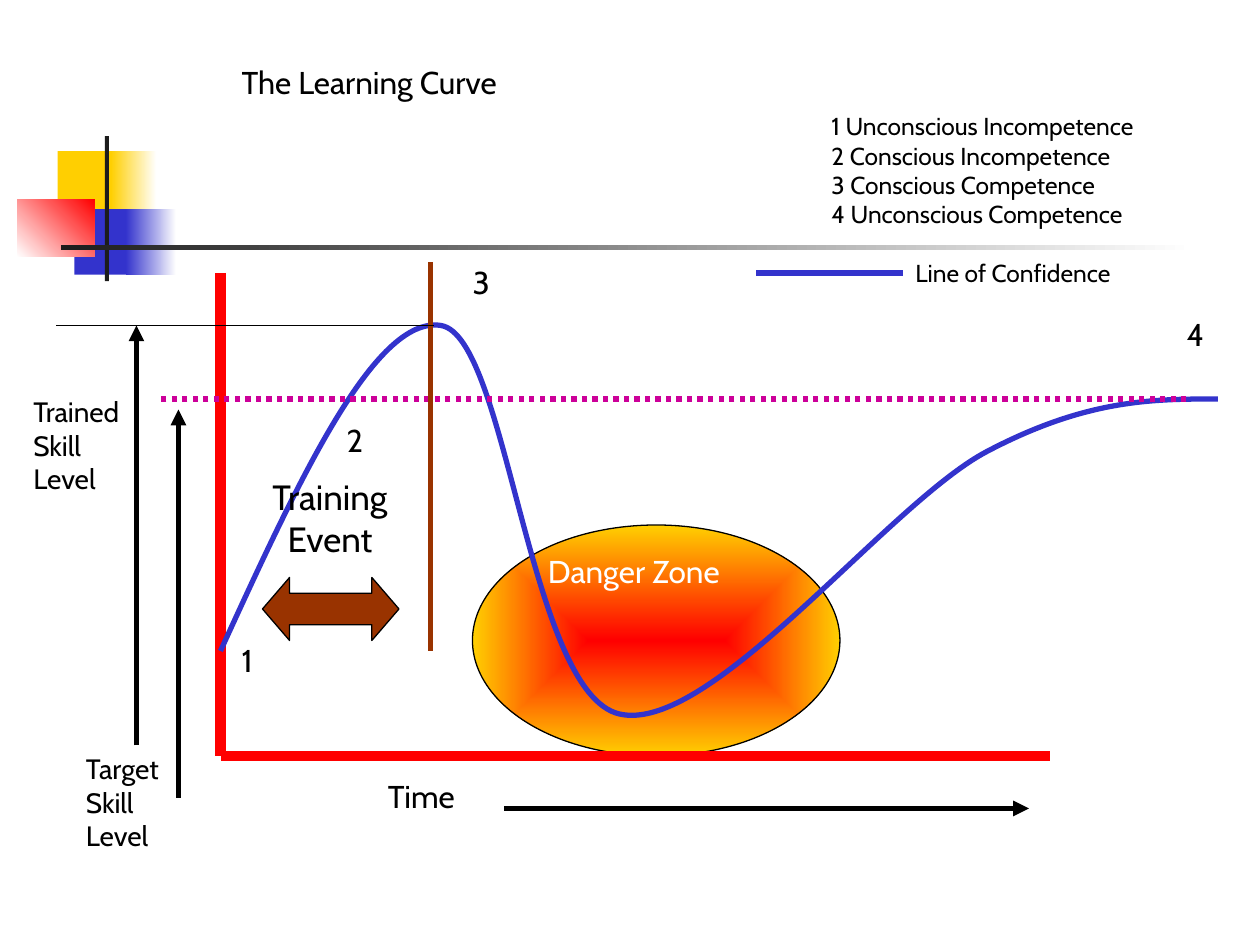
"""Build the learning curve slide with its confidence line and danger zone."""
import pptx
import pptx.dml.color
import pptx.enum.dml
import pptx.enum.shapes
import pptx.enum.text
import pptx.oxml
import pptx.oxml.ns
import pptx.util

Pt = pptx.util.Pt
SHAPES = pptx.enum.shapes.MSO_SHAPE
ALIGN = pptx.enum.text.PP_ALIGN
COLORS = {
    "black": "000000", "white": "FFFFFF", "dark": "1C1C1C", "yellow": "FFCF01",
    "blue": "3333CC", "red": "FF0000", "magenta": "CC0099", "brown": "993300",
}
FRAME_FORMAT = {
    "word_wrap": False,
    "auto_size": pptx.enum.text.MSO_AUTO_SIZE.SHAPE_TO_FIT_TEXT,
    "vertical_anchor": pptx.enum.text.MSO_ANCHOR.TOP,
}


def rgb(name):
    return pptx.dml.color.RGBColor.from_string(COLORS[name])


def set_formats(target, formats):
    for name, value in formats.items():
        setattr(target, name, value)


def set_line(line, color, width):
    line.color.rgb = rgb(color)
    line.width = Pt(width)


def add_element(parent, tag, **attributes):
    child = pptx.oxml.parse_xml(f"<a:{tag} {pptx.oxml.ns.nsdecls('a')}/>")
    for name, value in attributes.items():
        child.set(name, value)
    parent.append(child)
    return child


def add_block(page, kind, area, colors, angle=0, outline=None):
    block = page.shapes.add_shape(kind, *map(Pt, area))
    block.shadow.inherit = False
    if len(colors) == 1:
        block.fill.solid()
        block.fill.fore_color.rgb = rgb(colors[0])
    else:
        block.fill.gradient()
        block.fill.gradient_angle = angle
        for stop, color in zip(block.fill.gradient_stops, colors):
            stop.color.rgb = rgb(color)
    if outline:
        set_line(block.line, outline, 0.75)
    else:
        block.line.fill.background()
    return block


def make_gradient_radial(block):
    gradient = block._element.spPr.find(pptx.oxml.ns.qn("a:gradFill"))
    gradient.remove(gradient.find(pptx.oxml.ns.qn("a:lin")))
    radial = add_element(gradient, "path", path="shape")
    add_element(radial, "fillToRect", l="50000", t="50000", r="50000", b="50000")


def add_line(page, start, end, color, width, dash=None, arrow=False):
    straight = pptx.enum.shapes.MSO_CONNECTOR.STRAIGHT
    line = page.shapes.add_connector(straight, *map(Pt, start + end))
    set_line(line.line, color, width)
    if dash:
        line.line.dash_style = dash
    if arrow:
        add_element(line.line._get_or_add_ln(), "tailEnd", type="triangle")
    add_element(line._element.spPr, "effectLst")
    return line


def add_text(page, area, lines, size, color="black", align=ALIGN.LEFT):
    box = page.shapes.add_textbox(*map(Pt, area))
    set_formats(box.text_frame, FRAME_FORMAT)
    box.text_frame.text = "\n".join(lines)
    for para in box.text_frame.paragraphs:
        para.alignment = align
        for span in para.runs:
            set_formats(span.font, {"name": "Cabin", "size": Pt(size)})
            span.font.color.rgb = rgb(color)
    return box


def add_curve(page, start, controls, color, width):
    builder = page.shapes.build_freeform(*map(Pt, start))
    builder.add_line_segments([tuple(map(Pt, point)) for point in controls], close=False)
    curve = builder.convert_to_shape()
    curve.shadow.inherit = False
    curve.fill.background()
    set_line(curve.line, color, width)
    outline = next(curve._element.iter(pptx.oxml.ns.qn("a:path")))
    segments = outline.findall(pptx.oxml.ns.qn("a:lnTo"))
    for first in range(0, len(segments), 3):
        bezier = add_element(outline, "cubicBezTo")
        for segment in segments[first:first + 3]:
            bezier.append(segment[0])
            outline.remove(segment)


def add_ornament(page):
    for area, colors, angle in (
        ((33, 86.4, 34.6, 37.4), ["yellow"], 0),
        ((63.4, 86.4, 26, 37.4), ["yellow", "white"], 0),
        ((42.5, 119.5, 33, 37.4), ["blue"], 0),
        ((72, 119.5, 28.8, 37.4), ["blue", "white"], 0),
        ((10, 113.8, 44, 33), ["white", "red"], 45),
        ((60, 77.8, 2.2, 82.8), ["dark"], 0),
        ((34.6, 140.2, 648, 2.4), ["dark", "white"], 0),
    ):
        add_block(page, SHAPES.RECTANGLE, area, colors, angle)


def add_chart_lines(page):
    dots = pptx.enum.dml.MSO_LINE.ROUND_DOT
    add_line(page, (678, 228), (90, 228), "magenta", 3, dash=dots)
    add_line(page, (246, 150), (246, 372), "brown", 3)
    add_line(page, (248, 186), (32, 186), "black", 0.75)
    for start, end in (
        ((288, 462), (588, 462)),
        ((78, 426), (78, 186)),
        ((102, 456), (102, 234)),
    ):
        add_line(page, start, end, "black", 3, arrow=True)


def add_labels(page):
    add_text(page, (131, 32.4, 222, 36), ["The Learning Curve"], 18)
    add_text(page, (214.6, 440.6, 67, 36), ["Time"], 18)
    add_text(page, (306, 312, 151, 36), ["Danger Zone"], 18, "white")
    add_text(page, (145.4, 268, 86.4, 55.4), ["Training", "Event"], 20, align=ALIGN.CENTER)
    for left, top, level in ((12, 222, "Trained"), (42, 426, "Target")):
        add_text(page, (left, top, 70, 65), [level, "Skill", "Level"], 16)

    stages = (
        (131, 363, "Unconscious Incompetence"),
        (191, 237, "Conscious Incompetence"),
        (263, 147, "Conscious Competence"),
        (671, 176.4, "Unconscious Competence"),
    )
    for number, (left, top, _) in enumerate(stages, 1):
        add_text(page, (left, top, 27.4, 36), [str(number)], 18)
    legend = [f"{number} {stage[2]}" for number, stage in enumerate(stages, 1)]
    add_text(page, (468, 60, 195, 74), legend, 14)

    key_text = add_text(page, (516, 144, 129, 24), ["Line of Confidence"], 14)
    key_line = add_line(page, (432, 156), (516, 156), "blue", 3)
    key_line.end_connect(key_text, 1)


def main():
    deck = pptx.Presentation()
    set_formats(deck, {"slide_width": Pt(720), "slide_height": Pt(540)})
    page = deck.slides.add_slide(deck.slide_layouts[6])
    add_ornament(page)
    zone = add_block(page, SHAPES.OVAL, (270, 300, 210, 132), ["red", "yellow"], outline="black")
    make_gradient_radial(zone)
    add_line(page, (126, 156), (126, 432), "red", 6)
    add_line(page, (126, 432), (600, 432), "red", 6)
    add_curve(page, (126, 372), [
        (170, 276), (214, 180), (252, 186),
        (290, 192), (302, 396), (354, 408),
        (406, 420), (507, 288), (564, 258),
        (621, 228), (659, 228), (696, 228),
    ], "blue", 3)
    add_chart_lines(page)
    event = add_block(page, SHAPES.LEFT_RIGHT_ARROW, (150, 330, 78, 36), ["brown"], outline="black")
    event.adjustments[0], event.adjustments[1] = 0.5, 0.43
    add_labels(page)
    deck.save("out.pptx")


if __name__ == "__main__":
    main()
